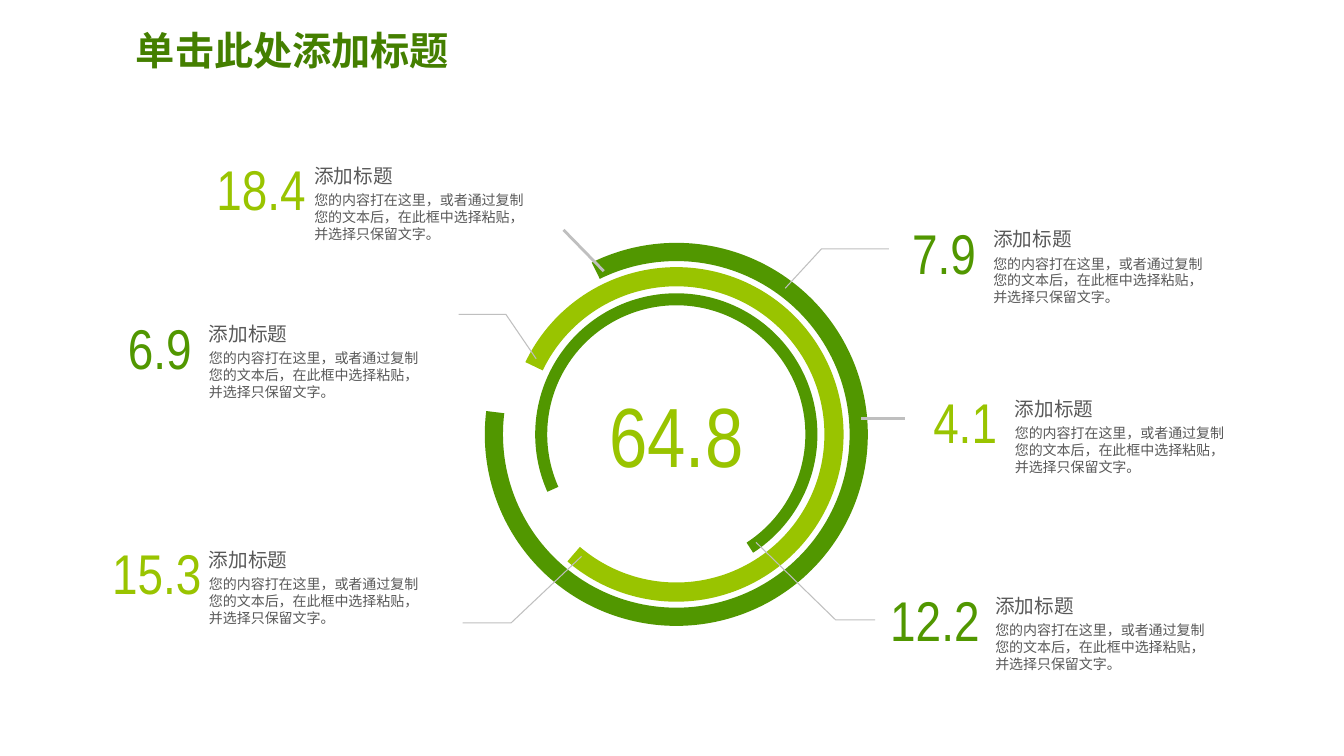
from lxml import etree
from pptx import Presentation
from pptx import util as u
from pptx.dml import color
from pptx.enum import lang, shapes, text
from pptx.oxml import ns

Pt = u.Pt
DARK, LIME, GREY, LEADER = "519700", "99C400", "595959", "BFBFBF"
CJK, NARROW = "Noto Sans CJK SC", "Arial Narrow"


def rgb(value):
    return color.RGBColor.from_string(value)


def write(words, left, top, width, height, size, ink, font=CJK, bold=False,
          wrap=True, align=text.PP_ALIGN.LEFT, anchor=text.MSO_ANCHOR.TOP,
          spacing=None, inset=None, fit=text.MSO_AUTO_SIZE.SHAPE_TO_FIT_TEXT):
    frame = slide.shapes.add_textbox(Pt(left), Pt(top), Pt(width), Pt(height)).text_frame
    frame.word_wrap, frame.auto_size, frame.vertical_anchor = wrap, fit, anchor
    if inset is not None:
        frame.margin_left = frame.margin_right = Pt(inset)
        frame.margin_top = frame.margin_bottom = Pt(inset)
    paragraph = frame.paragraphs[0]
    paragraph.alignment, paragraph.line_spacing = align, spacing
    run = paragraph.add_run()
    run.text = words
    run.font.size, run.font.bold, run.font.name = Pt(size), bold, font
    run.font.color.rgb = rgb(ink)
    run.font.language_id = lang.MSO_LANGUAGE_ID.SIMPLIFIED_CHINESE
    east_asian = etree.Element(ns.qn("a:ea"), typeface=font)
    run._r.get_or_add_rPr().find(ns.qn("a:latin")).addnext(east_asian)


deck = Presentation()
deck.slide_width, deck.slide_height = Pt(960), Pt(540)
slide = deck.slides.add_slide(deck.slide_layouts[6])

center_x, center_y = 483.1, 310.3
rings = [
    (100.8, 92.2, 156, 57, DARK),
    (119.5, 105.8, 205.6, 130.6, LIME),
    (136.8, 123.8, 243.8, 187, DARK),
]
for outer, inner, start, end, fill in rings:
    ring = slide.shapes.add_shape(shapes.MSO_SHAPE.BLOCK_ARC, Pt(center_x - outer),
                                  Pt(center_y - outer), Pt(2 * outer), Pt(2 * outer))
    ring.adjustments[0] = start * 0.6
    ring.adjustments[1] = end * 0.6
    ring.adjustments[2] = (outer - inner) / (2 * outer)
    ring.shadow.inherit = False
    ring.fill.solid()
    ring.fill.fore_color.rgb = rgb(fill)
    ring.line.fill.background()

leaders = [
    [(560.9, 205.9), (586.8, 177.8), (635, 177.8)],
    [(614.9, 298.8), (646.6, 298.8)],
    [(540, 387.4), (596.9, 442.8), (625, 442.8)],
    [(415.4, 397.4), (365, 445), (330.5, 445)],
    [(383, 256.3), (361.4, 224.6), (327.6, 224.6)],
    [(431.3, 193.7), (402.5, 164.2)],
]
for leader in leaders:
    points = [(Pt(x), Pt(y)) for x, y in leader]
    if len(points) == 2:
        stroke = slide.shapes.add_connector(shapes.MSO_CONNECTOR.STRAIGHT, *points[0], *points[1])
        etree.SubElement(stroke._element.spPr, ns.qn("a:effectLst"))
    else:
        builder = slide.shapes.build_freeform(*points[0])
        builder.add_line_segments(points[1:], close=False)
        stroke = builder.convert_to_shape()
        stroke.shadow.inherit = False
        stroke.fill.background()
    stroke.line.color.rgb = rgb(LEADER)
    stroke.line.width = Pt(0)

centered = dict(font=NARROW, wrap=False, align=text.PP_ALIGN.CENTER, anchor=text.MSO_ANCHOR.MIDDLE)
write("64.8", 428.4, 273.6, 109.4, 72.7, 60, LIME, inset=0, **centered)

callouts = [
    ("18.4", LIME, 145.4, 82.1, 217.4, 105.1),
    ("7.9", DARK, 642.2, 64.1, 702.4, 150.5),
    ("4.1", LIME, 659.5, 59.8, 717.8, 271.6),
    ("12.2", DARK, 627.1, 81.4, 703.8, 412.6),
    ("15.3", LIME, 72, 79.9, 142.2, 379.4),
    ("6.9", DARK, 82.1, 64.1, 142.2, 218.2),
]
for figure, ink, figure_left, figure_width, left, top in callouts:
    write("添加标题", left, top, 117.4, 32.4, 14, GREY, spacing=1.5)
    write("您的内容打在这里，或者通过复制您的文本后，在此框中选择粘贴，并选择只保留文字。",
          left, top + 28.1, 172.1, 43.9, 10, GREY)
    write(figure, figure_left, top + 1.8, figure_width, 55.4, 40, ink, **centered)

write("单击此处添加标题", 90, 7.2, 828, 61.2, 28, "447F00", font="Montserrat", bold=True,
      anchor=text.MSO_ANCHOR.MIDDLE, spacing=0.9, fit=text.MSO_AUTO_SIZE.NONE)

deck.save("out.pptx")
